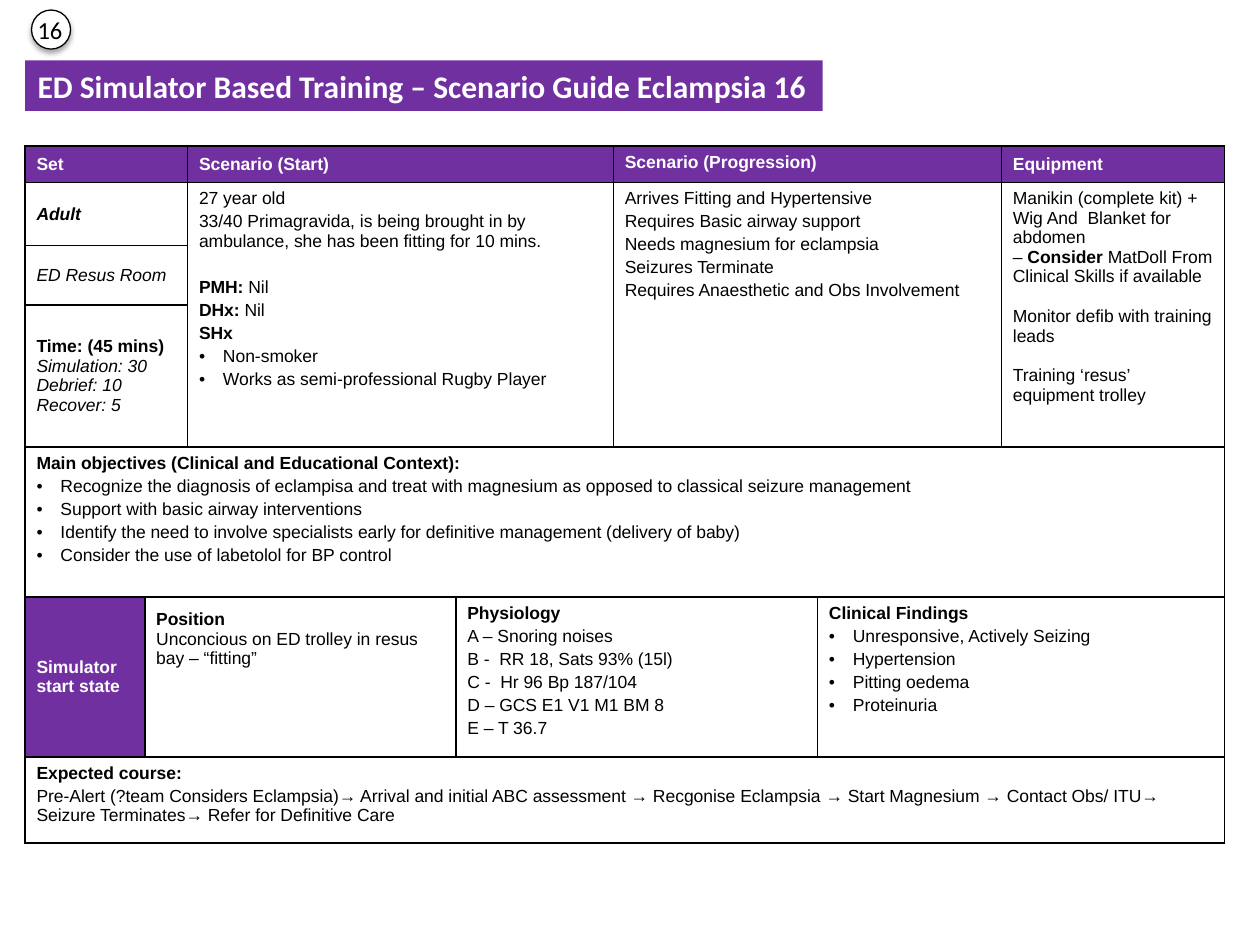
import pptx
import pptx.util
import pptx.oxml
import pptx.dml.color
import pptx.enum.shapes
import pptx.enum.text
from pptx.util import Inches, Pt

HUES = {"band": "7030A0", "white": "FFFFFF", "ink": "000000"}
KIND = pptx.enum.shapes.MSO_SHAPE
MID = pptx.enum.text.MSO_ANCHOR.MIDDLE
TOP = pptx.enum.text.MSO_ANCHOR.TOP
NS = 'xmlns:a="http://schemas.openxmlformats.org/drawingml/2006/main"'

COLS = [0.95, 0.34, 2.13, 1.25, 1.62, 1.46, 1.77]
ROWS = [0.29, 0.5, 0.47, 1.13, 1.19, 1.27, 0.68]

HEAD = dict(bold=True, hue="white")
BOLD = dict(bold=True)
SLANT = dict(italic=True)
NEXT = dict(gap=2)
ITEM = dict(gap=2, dot=True)
LINE = dict(gap=11.5)


def rgb(hue):
    return pptx.dml.color.RGBColor.from_string(HUES[hue])


def paint(item, hue):
    item.fill.solid()
    item.fill.fore_color.rgb = rgb(hue)


def put(frame, text, size=10, face="Arial", hue="ink", bold=False,
        italic=False, gap=0, dot=False):
    para = frame.paragraphs[0]
    if para.runs:
        para = frame.add_paragraph()
    if dot:
        props = para._p.get_or_add_pPr()
        props.set("marL", str(Inches(0.19)))
        props.set("indent", str(-Inches(0.19)))
        props.append(pptx.oxml.parse_xml(f'<a:buFont {NS} typeface="Arial"/>'))
        props.append(pptx.oxml.parse_xml(f'<a:buChar {NS} char="•"/>'))
    para.space_before = Pt(gap)
    for turn, part in enumerate(text.split("*")):
        if not part:
            continue
        run = para.add_run()
        run.text = part
        font = run.font
        font.size, font.name = Pt(size), face
        font.bold = bold or turn % 2 == 1
        font.italic = italic
        font.color.rgb = rgb(hue)


def edge(cell):
    props = cell._tc.get_or_add_tcPr()
    for spot, side in enumerate(("lnL", "lnR", "lnT", "lnB")):
        props.insert(spot, pptx.oxml.parse_xml(
            f'<a:{side} {NS} w="{Pt(1)}"><a:solidFill>'
            f'<a:srgbClr val="{HUES["ink"]}"/></a:solidFill></a:{side}>'))


def write(grid, row, col, high, wide, lines, fill="white", anchor=TOP, top=0.05):
    cell = grid.cell(row, col)
    if high * wide > 1:
        cell.merge(grid.cell(row + high - 1, col + wide - 1))
    paint(cell, fill)
    cell.vertical_anchor = anchor
    cell.margin_left = cell.margin_right = Inches(0.09)
    cell.margin_top, cell.margin_bottom = Inches(top), Inches(0.05)
    for text, form in lines:
        put(cell.text_frame, text, **form)


def header(grid, row):
    names = ["Set", "Scenario (Start)", "Scenario (Progression)", "Equipment"]
    for at, name in enumerate(names):
        write(grid, row, at * 2, 1, 1 if at == 3 else 2, [(name, HEAD)], "band",
              TOP if at == 2 else MID)


def setting(grid, row):
    parts = [
        [("Adult", dict(bold=True, italic=True))],
        [("ED Resus Room", SLANT)],
        [("Time: (45 mins)", BOLD), ("Simulation: 30 Debrief: 10", SLANT),
         ("Recover: 5", SLANT)],
    ]
    for step, lines in enumerate(parts):
        write(grid, row + step, 0, 1, 2, lines, anchor=MID)


def scene(grid, row):
    write(grid, row, 2, 3, 2, [
        ("27 year old", {}),
        ("33/40 Primagravida, is being brought in by ambulance, "
         "she has been fitting for 10 mins.", NEXT),
        ("*PMH: *Nil", dict(gap=15)),
        ("*DHx: *Nil", NEXT),
        ("*SHx*", NEXT),
        ("Non-smoker", ITEM),
        ("Works as semi-professional Rugby Player", ITEM)])
    write(grid, row, 4, 3, 2, [
        ("Arrives Fitting and Hypertensive", {}),
        ("Requires Basic airway support", NEXT),
        ("Needs magnesium for eclampsia", NEXT),
        ("Seizures Terminate", NEXT),
        ("Requires Anaesthetic and Obs Involvement", NEXT)])
    write(grid, row, 6, 3, 1, [
        ("Manikin (complete kit) + Wig And  Blanket for abdomen", {}),
        ("– *Consider *MatDoll From Clinical Skills if available", {}),
        ("Monitor defib with training leads", LINE),
        ("Training ‘resus’ equipment trolley", LINE)])


def goals(grid, row):
    write(grid, row, 0, 1, 7, [
        ("Main objectives (Clinical and Educational Context):", BOLD),
        ("Recognize the diagnosis of eclampisa and treat with magnesium "
         "as opposed to classical seizure management", ITEM),
        ("Support with basic airway interventions", ITEM),
        ("Identify the need to involve specialists early for definitive "
         "management (delivery of baby)", ITEM),
        ("Consider the use of labetolol for BP control", ITEM)])


def state(grid, row):
    write(grid, row, 0, 1, 1, [("Simulator", HEAD), ("start state", HEAD)],
          "band", MID)
    write(grid, row, 1, 1, 2, [
        ("Position", BOLD),
        ("Unconcious on ED trolley in resus bay – “fitting”", {})], top=0.1)
    write(grid, row, 3, 1, 2, [
        ("Physiology", BOLD),
        ("A – Snoring noises", NEXT),
        ("B -  RR 18, Sats 93% (15l)", NEXT),
        ("C -  Hr 96 Bp 187/104", NEXT),
        ("D – GCS E1 V1 M1 BM 8", NEXT),
        ("E – T 36.7", NEXT)])
    write(grid, row, 5, 1, 2, [
        ("Clinical Findings", BOLD),
        ("Unresponsive, Actively Seizing", ITEM),
        ("Hypertension", ITEM),
        ("Pitting oedema", ITEM),
        ("Proteinuria", ITEM)])


def course(grid, row):
    write(grid, row, 0, 1, 7, [
        ("Expected course:", BOLD),
        ("Pre-Alert (?team Considers Eclampsia)→ Arrival and initial ABC "
         "assessment → Recgonise Eclampsia → Start Magnesium → Contact "
         "Obs/ ITU→ Seizure Terminates→ Refer for Definitive Care", NEXT)])


def guide(slide, left, top, width, height):
    grid = slide.shapes.add_table(len(ROWS), len(COLS), left, top,
                                  width, height).table
    for col, size in zip(grid.columns, COLS):
        col.width = int(width * size / sum(COLS))
    for row, size in zip(grid.rows, ROWS):
        row.height = int(height * size / sum(ROWS))
    header(grid, 0)
    setting(grid, 1)
    scene(grid, 1)
    goals(grid, 4)
    state(grid, 5)
    course(grid, 6)
    for cell in grid.iter_cells():
        edge(cell)


def title(slide, left, top, width, height):
    band = slide.shapes.add_shape(KIND.RECTANGLE, left, top, width, height)
    band.shadow.inherit = False
    paint(band, "band")
    band.line.fill.background()
    frame = band.text_frame
    frame.word_wrap = False
    frame.vertical_anchor = MID
    frame.paragraphs[0].alignment = pptx.enum.text.PP_ALIGN.LEFT
    put(frame, "ED Simulator Based Training – Scenario Guide Eclampsia 16",
        size=18, face="Calibri", hue="white", bold=True)


def badge(slide, left, top, width, height):
    group = slide.shapes.add_group_shape()
    side = Inches(0.31)
    disc = group.shapes.add_shape(KIND.OVAL, left + Inches(0.05),
                                  top + Inches(0.01), side, side)
    disc.shadow.inherit = False
    paint(disc, "white")
    disc.line.color.rgb = rgb("ink")
    disc.line.width = Pt(0.75)
    disc._element.spPr.find(pptx.oxml.ns.qn("a:effectLst")).append(
        pptx.oxml.parse_xml(
            f'<a:outerShdw {NS} blurRad="{Pt(3.1)}" dist="{Pt(1.8)}" '
            f'dir="5400000" rotWithShape="0"><a:srgbClr val="{HUES["ink"]}">'
            '<a:alpha val="35000"/></a:srgbClr></a:outerShdw>'))
    label = group.shapes.add_textbox(left, top, width, height)
    label.text_frame.word_wrap = False
    put(label.text_frame, "16", size=14, face="Calibri")


def main():
    deck = pptx.Presentation()
    deck.slide_width, deck.slide_height = Inches(10), Inches(7.5)
    slide = deck.slides.add_slide(deck.slide_layouts[6])
    title(slide, Inches(0.2), Inches(0.48), Inches(6.33), Inches(0.4))
    guide(slide, Inches(0.2), Inches(1.16), Inches(9.52), Inches(5.53))
    badge(slide, Inches(0.2), Inches(0.07), Inches(0.4), Inches(0.34))
    deck.save("out.pptx")


if __name__ == "__main__":
    main()
